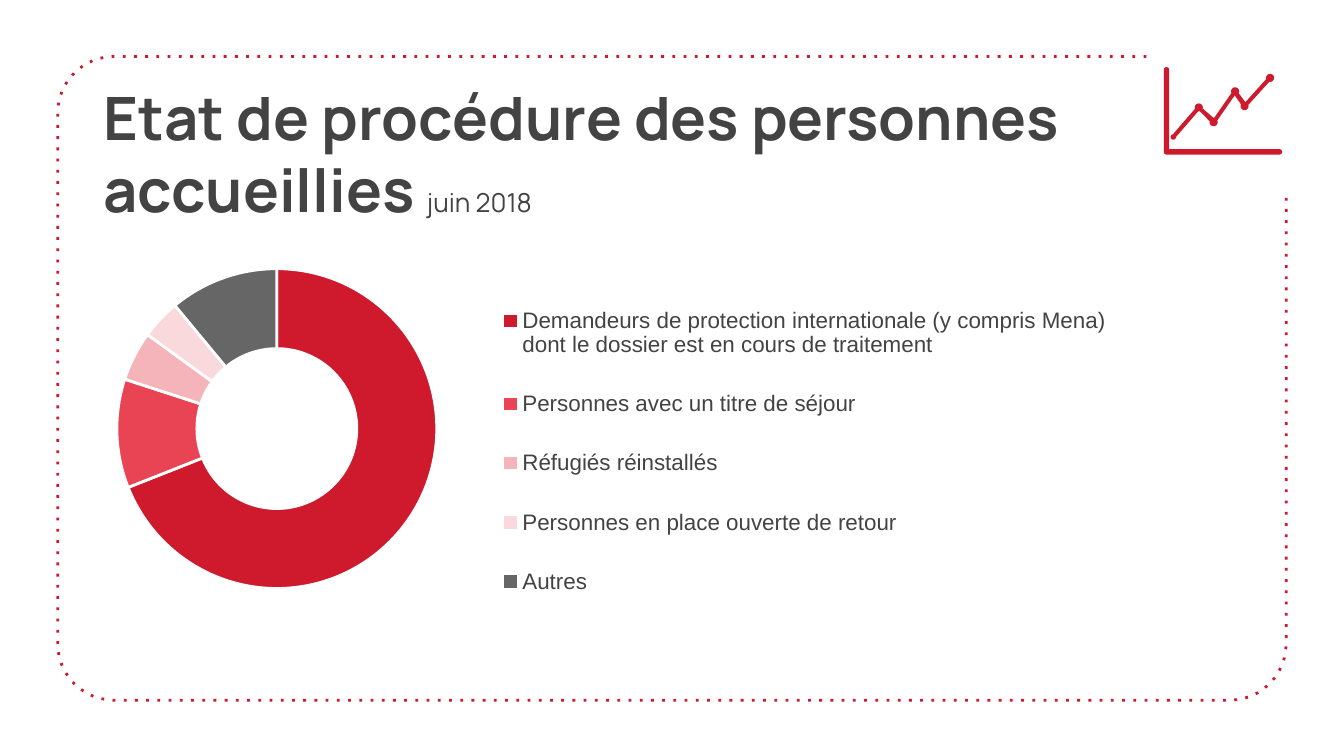
"""Build the slide on the procedural status of the people hosted, June 2018."""
from math import asin, atan2, cos, hypot, pi, sin

from lxml.etree import SubElement
from pptx import Presentation
from pptx.chart.data import CategoryChartData
from pptx.dml.color import RGBColor
from pptx.enum.chart import XL_CHART_TYPE as ChartType, XL_LEGEND_POSITION as LegendPos
from pptx.enum.dml import MSO_LINE
from pptx.enum.text import MSO_ANCHOR, MSO_AUTO_SIZE, PP_ALIGN
from pptx.oxml import parse_xml
from pptx.oxml.ns import nsdecls, qn
from pptx.util import Inches, Pt

COLORS = {
    "red": "CF192C",
    "coral": "E84454",
    "pink": "F5B4BA",
    "blush": "FAD9DC",
    "gray": "666666",
    "text": "434343",
    "axis": "7F7F7F",
    "white": "FFFFFF",
}

STATUSES = [
    ("Demandeurs de protection internationale (y compris Mena) "
     "dont le dossier est en cours de traitement", 69, "red"),
    ("Personnes avec un titre de séjour", 11, "coral"),
    ("Réfugiés réinstallés", 5, "pink"),
    ("Personnes en place ouverte de retour", 4, "blush"),
    ("Autres", 11, "gray"),
]
CHART_SIZE = (8.97, 3.1)


def rgb(name):
    """Return the named colour."""
    return RGBColor.from_string(COLORS[name])


def arc(center, radius, start, end, steps=12):
    """Return points along an arc between two angles."""
    x, y = center
    angles = [start + (end - start) * i / steps for i in range(steps + 1)]
    return [(x + radius * cos(a), y + radius * sin(a)) for a in angles]


def add_freeform(shapes, points, close):
    """Add a freeform through points given in inches."""
    corners = [(Inches(x), Inches(y)) for x, y in points]
    builder = shapes.build_freeform(*corners[0])
    builder.add_line_segments(corners[1:], close=close)
    sp = builder.convert_to_shape()
    sp.shadow.inherit = False
    return sp


def add_frame(s):
    """Add the dotted rounded frame, open at the top right corner."""
    left, top, right, bottom, radius = 0.43, 0.42, 9.57, 5.21, 0.42
    points = [(8.53, top)]
    points += arc((left + radius, top + radius), radius, -pi / 2, -pi)
    points += arc((left + radius, bottom - radius), radius, pi, pi / 2)
    points += arc((right - radius, bottom - radius), radius, pi / 2, 0)
    points.append((right, 1.46))
    sp = add_freeform(s.shapes, points, close=False)
    sp.fill.background()
    sp.line.color.rgb = rgb("red")
    sp.line.width = Pt(1.5)
    sp.line.dash_style = MSO_LINE.ROUND_DOT
    sp.line._ln.find(qn("a:prstDash")).set("val", "dot")


def stroke_outline(nodes, width):
    """Return the outline of a stroke whose (x, y, radius) nodes are round."""
    half = width / 2
    tour = nodes + nodes[-2:0:-1]
    points = []
    for i, (x, y, radius) in enumerate(tour):
        px, py, _ = tour[i - 1]
        nx, ny, _ = tour[(i + 1) % len(tour)]
        start = atan2(py - y, px - x)
        turn = (atan2(ny - y, nx - x) - start) % (2 * pi) or 2 * pi
        gap = asin(min(1, half / radius))
        if turn < 2 * gap:
            reach = half / sin(turn / 2)
            middle = start + turn / 2
            points.append((x + reach * cos(middle), y + reach * sin(middle)))
        else:
            points += arc((x, y), radius, start + gap, start + turn - gap)
    return [p for p, q in zip(points, points[1:] + points[:1])
            if hypot(p[0] - q[0], p[1] - q[1]) > 0.001]


def add_icon(s):
    """Add the line graph icon as a group of two outlines."""
    axes = [(x, y, 0.02) for x, y in [(8.68, 0.52), (8.68, 1.13), (9.52, 1.13)]]
    peaks = [(8.92, 0.8), (9.03, 0.91), (9.19, 0.68), (9.26, 0.79), (9.45, 0.58)]
    trend = [(8.73, 1.02, 0.02)] + [(x, y, 0.03) for x, y in peaks]
    group = s.shapes.add_group_shape()
    for nodes, width in ((axes, 0.04), (trend, 0.03)):
        sp = add_freeform(group.shapes, stroke_outline(nodes, width), close=True)
        sp.fill.solid()
        sp.fill.fore_color.rgb = rgb("red")
        sp.line.fill.background()


def add_title(s):
    """Fill and format the title placeholder."""
    sp = s.shapes.title
    sp.left, sp.top, sp.width, sp.height = map(Inches, (0.67, 0.5, 8.55, 0.94))
    tf = sp.text_frame
    tf.word_wrap = True
    tf.auto_size = MSO_AUTO_SIZE.NONE
    tf.vertical_anchor = MSO_ANCHOR.TOP
    tf.margin_left = tf.margin_right = Inches(0.1)
    tf.margin_top = tf.margin_bottom = Inches(0.1)
    p = tf.paragraphs[0]
    p.alignment = PP_ALIGN.LEFT
    runs = [("Etat de procédure des personnes accueillies ", 32, True),
            ("juin 2018", 14, False)]
    for text, size, bold in runs:
        r = p.add_run()
        r.text = text
        set_font(r.font, "Manrope", size, "text")
        r.font.bold = bold


def set_font(font, name, size, color):
    """Set the name, size and colour of a font."""
    font.name = name
    font.size = Pt(size)
    font.color.rgb = rgb(color)


def set_layout(parent, index, box, inner=False):
    """Place a chart part by a box in inches from the chart's corner."""
    for old in parent.findall(qn("c:layout")):
        parent.remove(old)
    layout = parse_xml(f"<c:layout {nsdecls('c')}><c:manualLayout/></c:layout>")
    shares = [length / size for length, size in zip(box, CHART_SIZE * 2)]
    entries = [("layoutTarget", "inner")] if inner else []
    entries += [("xMode", "edge"), ("yMode", "edge"), *zip("xywh", shares)]
    for tag, value in entries:
        SubElement(layout[0], qn(f"c:{tag}")).set("val", str(value))
    parent.insert(index, layout)


def add_status_chart(s):
    """Add the doughnut chart with its legend."""
    data = CategoryChartData()
    data.categories = [label for label, _, _ in STATUSES]
    data.add_series("Series 1", [value for _, value, _ in STATUSES])
    box = map(Inches, (-0.59, 1.85, *CHART_SIZE))
    chart = s.shapes.add_chart(ChartType.DOUGHNUT, *box, data).chart
    chart.has_title = False
    set_font(chart.font, "Arial", 10, "axis")
    plot = chart.plots[0]
    plot.vary_by_categories = True
    for i, (_, _, color) in enumerate(STATUSES):
        fmt = plot.series[0].points[i].format
        fmt.fill.solid()
        fmt.fill.fore_color.rgb = rgb(color)
        fmt.line.color.rgb = rgb("white")
        fmt.line.width = Pt(1.5)
    plot_area = chart._chartSpace.chart.plotArea
    plot_area.find(".//" + qn("c:holeSize")).set("val", "70")
    set_layout(plot_area, 0, (1.05, 0.15, 3.2, 2.38), inner=True)
    chart.has_legend = True
    legend = chart.legend
    legend.position = LegendPos.RIGHT
    legend.include_in_layout = False
    set_font(legend.font, "Arial", 12, "text")
    set_layout(legend._element, 1, (4.25, 0.19, 4.66, 2.64))


def main():
    """Build and save the slide."""
    prs = Presentation()
    prs.slide_width = Inches(10)
    prs.slide_height = prs.slide_width * 9 // 16
    s = prs.slides.add_slide(prs.slide_layouts[5])
    add_frame(s)
    add_title(s)
    add_icon(s)
    add_status_chart(s)
    prs.save("out.pptx")


if __name__ == "__main__":
    main()
